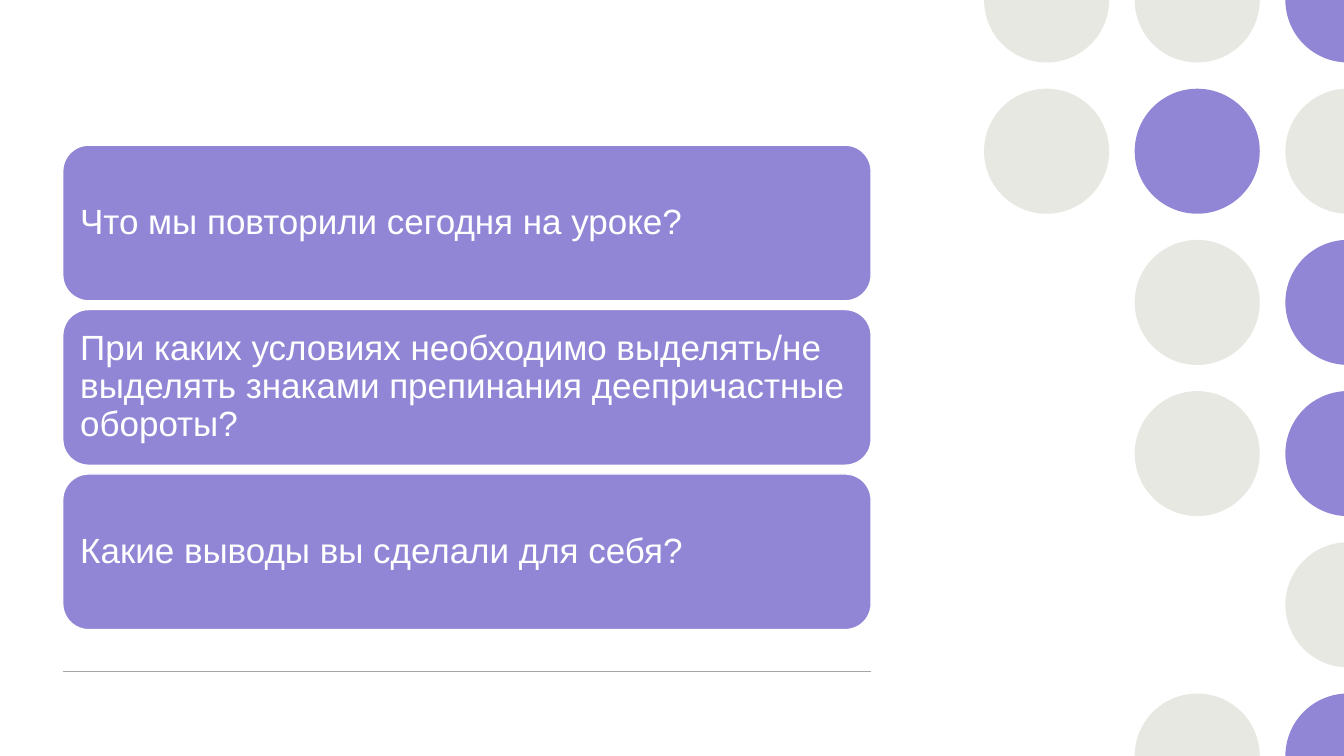
from dataclasses import dataclass
import math

from lxml import etree
from pptx import Presentation
from pptx import util as u
from pptx.dml.color import RGBColor
from pptx.enum import shapes, text

DRAWING = "{http://schemas.openxmlformats.org/drawingml/2006/main}"
WIDTH, HEIGHT = u.Inches(13.33), u.Inches(7.5)
QUESTIONS = (
    "Что мы повторили сегодня на уроке?",
    "При каких условиях необходимо выделять/не выделять знаками препинания деепричастные обороты?",
    "Какие выводы вы сделали для себя?",
)
DOT_ROWS = ("GGV", "GVG", ".GV", ".GV", "..G", ".GV")


@dataclass(frozen=True)
class Theme:
    """Colours and type of the slide."""
    violet: RGBColor = RGBColor.from_string("9186D6")
    grey: RGBColor = RGBColor.from_string("E7E8E2")
    rule: RGBColor = RGBColor.from_string("A6A6A6")
    white: RGBColor = RGBColor.from_string("FFFFFF")
    font: str = "Arial"
    size: u.Pt = u.Pt(25)
    line: u.Pt = u.Pt(1)


THEME = Theme()


def across(percent):
    """Return a share of the slide's width."""
    return round(WIDTH * percent / 100)


def down(percent):
    """Return a share of the slide's height."""
    return round(HEIGHT * percent / 100)


def apply(target, values):
    """Set each named attribute on the target."""
    for name, value in values.items():
        setattr(target, name, value)


def add_element(parent, tag, **values):
    """Append a drawing element with whole-number attributes."""
    return etree.SubElement(parent, DRAWING + tag, {name: str(round(value)) for name, value in values.items()})


def paint(shape, fill, line=None):
    """Give a shape a plain fill and an optional outline."""
    shape.shadow.inherit = False
    shape.fill.solid()
    shape.fill.fore_color.rgb = fill
    if line is None:
        shape.line.fill.background()
    else:
        shape.line.color.rgb = line
        shape.line.width = THEME.line


def add_cut_dot(page, centre_x, centre_y, radius):
    """Draw the part of a circle that lies inside the slide."""
    left, right = centre_x - radius, min(centre_x + radius, WIDTH)
    top, bottom = max(centre_y - radius, 0), min(centre_y + radius, HEIGHT)
    outline = page.shapes.build_freeform(left, top)
    outline.add_line_segments([(right, top), (right, bottom), (left, bottom)], close=True)
    dot = outline.convert_to_shape()

    at_top, at_bottom = centre_y < radius, centre_y + radius > HEIGHT
    at_right = centre_x + radius > WIDTH
    lean = math.degrees(math.asin((centre_x - WIDTH) / radius)) if at_right else 0
    start = 180 if at_bottom else 90 + lean if at_right else 0
    end = 180 if at_top else 270 - lean if at_right else 360
    angle = math.radians(start)

    track = dot.element.find(f".//{DRAWING}path")
    for step in list(track):
        track.remove(step)
    add_element(add_element(track, "moveTo"), "pt",
                x=centre_x + radius * math.cos(angle) - left,
                y=centre_y + radius * math.sin(angle) - top)
    add_element(track, "arcTo", wR=radius, hR=radius, stAng=start * 60000, swAng=(end - start) * 60000)
    if at_right and (at_top or at_bottom):
        add_element(add_element(track, "lnTo"), "pt", x=right - left, y=centre_y - top)
    add_element(track, "close")
    return dot


def add_dot(page, centre_x, centre_y, radius, colour):
    """Draw a circle, cut off where it meets the slide's edge."""
    if centre_x + radius <= WIDTH and radius <= centre_y <= HEIGHT - radius:
        dot = page.shapes.add_shape(
            shapes.MSO_SHAPE.OVAL, centre_x - radius, centre_y - radius, 2 * radius, 2 * radius)
    else:
        dot = add_cut_dot(page, centre_x, centre_y, radius)
    paint(dot, colour)


def add_dots(page):
    """Lay out the dot pattern on its grid."""
    colours = {"G": THEME.grey, "V": THEME.violet}
    for row, marks in enumerate(DOT_ROWS):
        for column, mark in enumerate(marks):
            if mark in colours:
                add_dot(page, across(77.87 + 11.21 * column), down(20 * row), down(8.27), colours[mark])


def add_rule(page, left, right, top):
    """Draw the thin line below the cards."""
    rule = page.shapes.add_connector(shapes.MSO_CONNECTOR.STRAIGHT, left, top, right, top)
    rule.line.color.rgb = THEME.rule
    rule.line.width = THEME.line
    add_element(rule.element.spPr, "effectLst")


def add_card(page, left, top, width, height, question):
    """Draw a rounded card holding one question."""
    card = page.shapes.add_shape(shapes.MSO_SHAPE.ROUNDED_RECTANGLE, left, top, width, height)
    paint(card, THEME.violet, THEME.white)
    box = card.text_frame
    sides = ("left", "top", "right", "bottom")
    apply(box, {f"margin_{side}": u.Inches(0.1) for side in sides})
    apply(box, {"word_wrap": True, "vertical_anchor": text.MSO_ANCHOR.MIDDLE})
    para = box.paragraphs[0]
    apply(para, {"alignment": text.PP_ALIGN.LEFT, "line_spacing": 0.9})
    span = para.add_run()
    span.text = question
    apply(span.font, {"name": THEME.font, "size": THEME.size})
    span.font.color.rgb = THEME.white


def main():
    """Build and save the slide."""
    deck = Presentation()
    apply(deck, {"slide_width": WIDTH, "slide_height": HEIGHT})
    page = deck.slides.add_slide(deck.slide_layouts[6])
    add_dots(page)
    left, width = across(4.67), across(60.15)
    add_rule(page, left, left + width, down(88.8))
    for row, question in enumerate(QUESTIONS):
        add_card(page, left, down(19.2 + 21.75 * row), width, down(20.6), question)
    deck.save("out.pptx")


if __name__ == "__main__":
    main()
